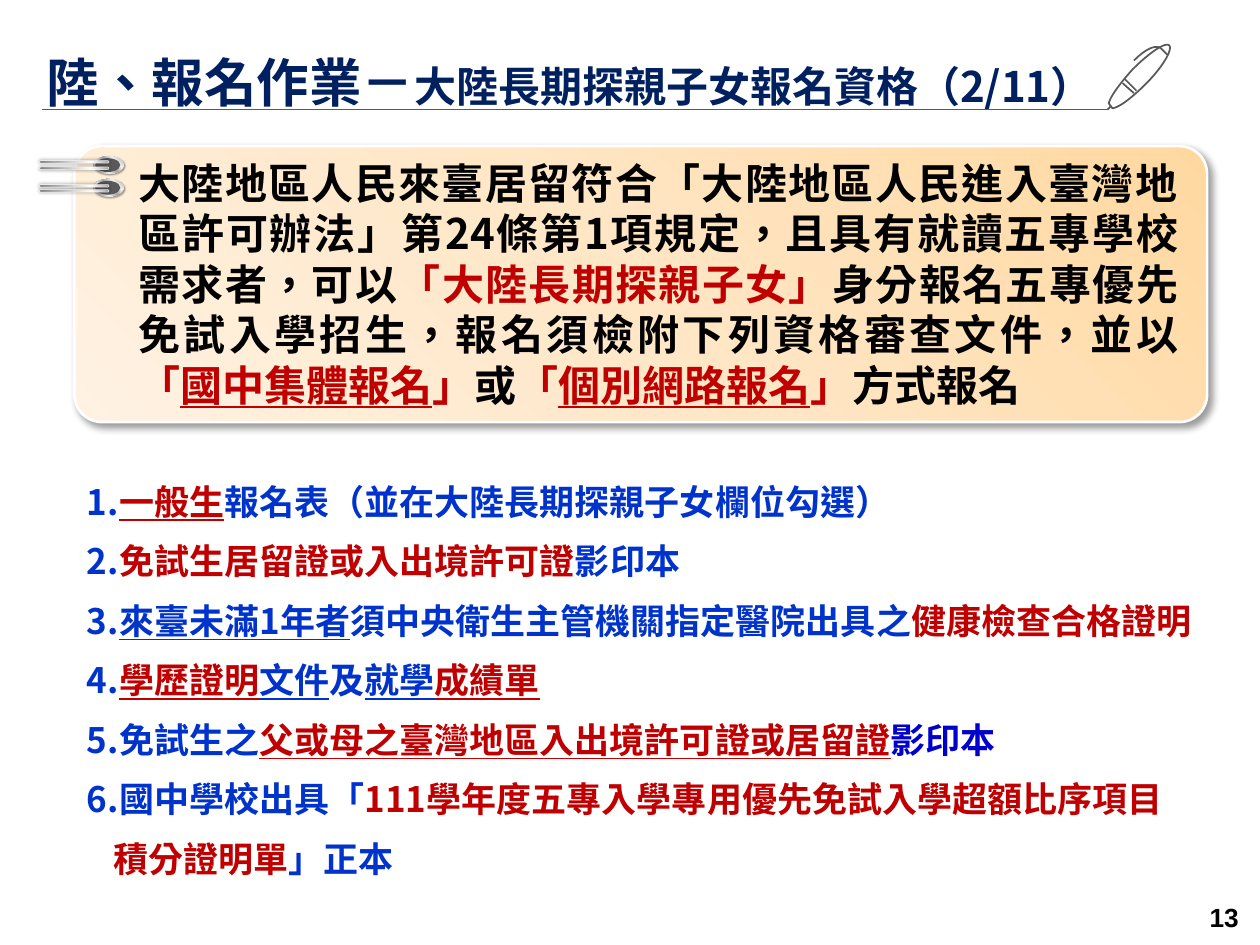
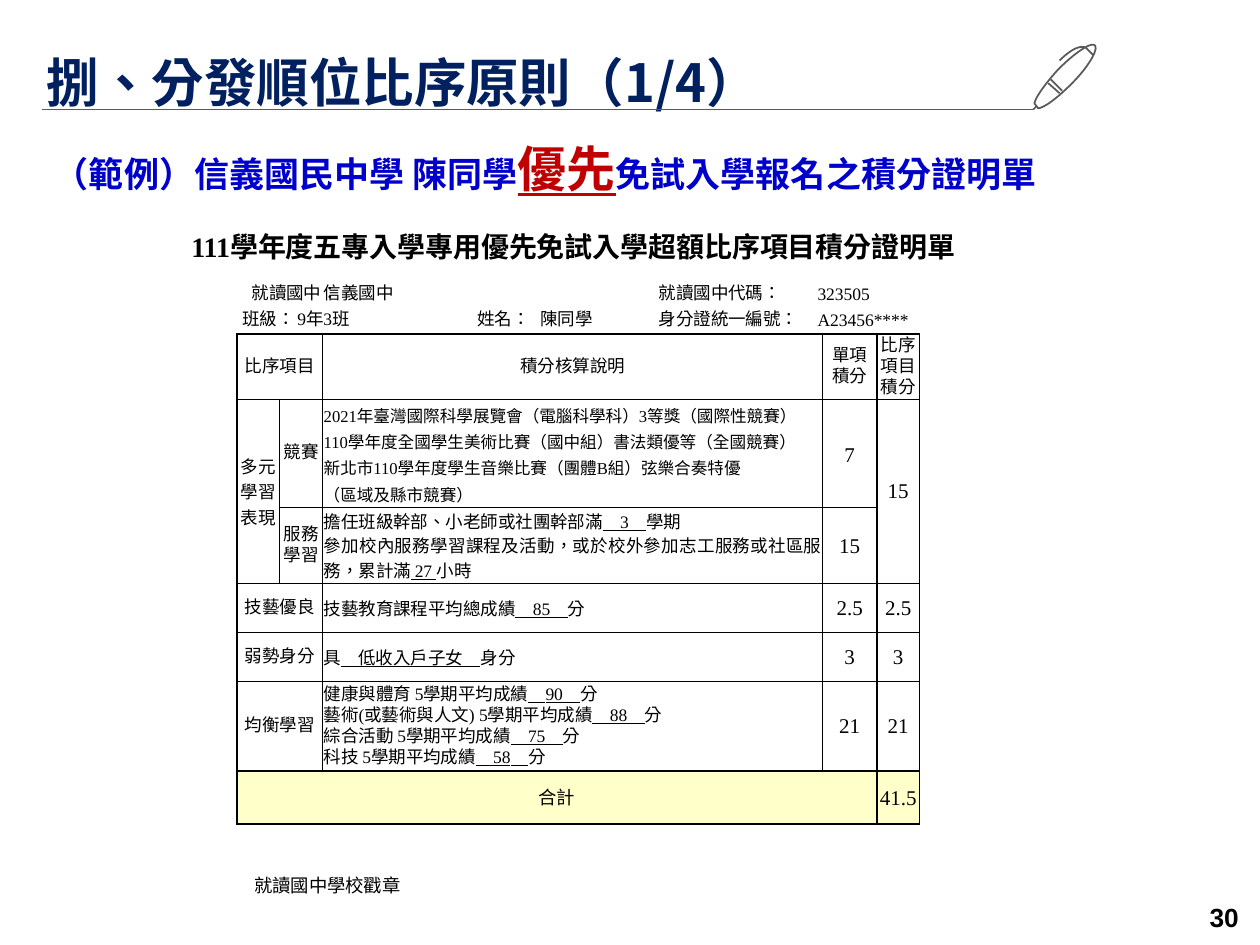
from dataclasses import dataclass
from typing import NamedTuple, Optional, Union

import pptx
import pptx.dml.color
import pptx.enum.shapes
import pptx.enum.text
import pptx.oxml
import pptx.oxml.ns
import pptx.util

Inches, Pt = pptx.util.Inches, pptx.util.Pt
ALIGN, ANCHOR = pptx.enum.text.PP_ALIGN, pptx.enum.text.MSO_ANCHOR
SHAPE = pptx.enum.shapes.MSO_SHAPE
qn = pptx.oxml.ns.qn

SANS, SERIF, ARIAL = "Noto Sans CJK SC", "Times New Roman", "Arial"
BLACK, WHITE, GREY, NAVY = "000000", "FFFFFF", "595959", "002060"
RED, BLUE, DEEP_BLUE, YELLOW = "C00000", "0033CC", "0000CC", "FFFFCA"

CALLOUT_STOPS = [(0, "FFD8A0"), (50, "FFE6C5"), (100, "FFF2E3")]
RING_STOPS = [(0, WHITE), (17, "A6A6A6"), (35, "F2F2F2"), (55, "A6A6A6"), (75, "F2F2F2"), (100, "A6A6A6")]
WIRE_STOPS = [(0, "808080"), (23, "A6A6A6"), (52, "D9D9D9"), (74, WHITE), (100, "A6A6A6")]
FOCUS_TOP_RIGHT = '<a:path path="circle"><a:fillToRect l="100000" b="100000"/></a:path>'

TITLE_LEFT, RULE_LEFT, RULE_Y, PEN_TOP = 0.27, 0.33, 0.87, 0.33
NO_STYLE_NO_GRID = "{2D5ABB26-0587-4C30-8999-92F81FD0307C}"


class Box(NamedTuple):
    left: float
    top: float
    width: float
    height: float

    def emu(self) -> list:
        return [Inches(v) for v in self]


class Span(NamedTuple):
    """A stretch of text; unset fields follow the paragraph."""
    text: str
    color: Optional[str] = None
    underline: bool = False
    size: Optional[float] = None


Text = Union[str, list]


@dataclass
class Cell:
    row: int
    col: int
    paragraphs: list
    rows: int = 1
    cols: int = 1
    align: object = ALIGN.CENTER
    size: float = 10
    line: object = Pt(12)
    indent: Optional[float] = None


def rgb(color: str):
    return pptx.dml.color.RGBColor.from_string(color)


def xml(markup: str):
    tag = markup[1:].split(" ")[0].split(">")[0].rstrip("/")
    return pptx.oxml.parse_xml(markup.replace(tag, f"{tag} {pptx.oxml.ns.nsdecls('a')}", 1))


def add_text(tf, text: Text, *, size: float, color: str = BLACK, latin: str = SANS, bold: bool = False,
             align=ALIGN.LEFT, line=None, before: float = 0, indent: Optional[float] = None) -> None:
    """Write one paragraph, filling the first one while it is empty."""
    p = tf.paragraphs[-1]
    if p.runs:
        p = tf.add_paragraph()
    p.alignment, p.space_before = align, Pt(before)
    if line is not None:
        p.line_spacing = line
    if indent is not None:
        pPr = p._p.get_or_add_pPr()
        pPr.set("marL", str(Inches(indent)))
        pPr.set("indent", "0")
        pPr.append(xml("<a:buNone/>"))
    for span in [Span(text)] if isinstance(text, str) else text:
        r = p.add_run()
        r.text = span.text
        r.font.size, r.font.bold = Pt(span.size or size), bold
        r.font.underline, r.font.name = span.underline, latin
        r.font.color.rgb = rgb(span.color or color)
        rPr = r._r.get_or_add_rPr()
        rPr.set("lang", "zh-TW")
        rPr.append(xml(f'<a:ea typeface="{SANS}"/>'))


def add_text_box(s, box: Box, text: Text, *, wrap: bool = True, anchor=ANCHOR.TOP, **fmt) -> None:
    tf = s.shapes.add_textbox(*box.emu()).text_frame
    tf.word_wrap, tf.vertical_anchor = wrap, anchor
    add_text(tf, text, **fmt)


def place(ph, box: Box):
    """Move a placeholder and return its text frame, top aligned and without fitting."""
    ph.left, ph.top, ph.width, ph.height = box.emu()
    tf = ph.text_frame
    tf.word_wrap, tf.vertical_anchor = True, ANCHOR.TOP
    tf.auto_size = pptx.enum.text.MSO_AUTO_SIZE.NONE
    return tf


def add_shape(s, kind, box: Box, *, fill: Union[str, list], direction: str = "", line: float = 0,
              rotation: float = 0, radius: Optional[float] = None, shadow: Optional[tuple] = None) -> None:
    """fill is a colour or gradient stops; shadow is blur, distance and angle."""
    sp = s.shapes.add_shape(kind, *box.emu())
    sp.rotation = rotation
    if radius is not None:
        sp.adjustments[0] = radius
    if line:
        sp.line.color.rgb, sp.line.width = rgb(WHITE), Pt(line)
    else:
        sp.line.fill.background()
    spPr = sp._element.spPr
    if isinstance(fill, str):
        sp.fill.solid()
        sp.fill.fore_color.rgb = rgb(fill)
    else:
        stops = "".join(f'<a:gs pos="{at * 1000}"><a:srgbClr val="{c}"/></a:gs>' for at, c in fill)
        spPr.find(qn("a:prstGeom")).addnext(xml(
            f'<a:gradFill rotWithShape="1"><a:gsLst>{stops}</a:gsLst>{direction}</a:gradFill>'))
    sp.shadow.inherit = False
    if shadow:
        blur, distance, angle = shadow
        spPr.find(qn("a:effectLst")).append(xml(
            f'<a:outerShdw blurRad="{Pt(blur)}" dist="{Pt(distance)}" dir="{angle * 60000}" algn="tl" '
            f'rotWithShape="0"><a:srgbClr val="{BLACK}"><a:alpha val="40000"/></a:srgbClr></a:outerShdw>'))


def linear(angle: int) -> str:
    return f'<a:lin ang="{angle * 60000}" scaled="0"/>'


def bezier(*points: tuple, steps: int = 12) -> list:
    """Points along a cubic curve, without its start."""
    curve = []
    for t in (i / steps for i in range(1, steps + 1)):
        weights = ((1 - t) ** 3, 3 * t * (1 - t) ** 2, 3 * t * t * (1 - t), t ** 3)
        curve.append(tuple(sum(w * pt[axis] for w, pt in zip(weights, points)) for axis in (0, 1)))
    return curve


def add_pen(s, left: float) -> None:
    body = [(49, 3), *bezier((49, 3), (46, 0), (33, 9), (20, 22)),
            *bezier((20, 22), (10, 33), (2, 44), (1, 49)), (4, 53),
            *bezier((4, 53), (10, 52), (20, 44), (31, 33)),
            *bezier((31, 33), (44, 20), (52, 6), (49, 3))]
    clip = [(48, 11), (42, 5), *bezier((42, 5), (42, 5), (36, 0), (21, 15))]
    strokes = [[(21, 41), (12, 33)], [(14, 30), (23, 39)], body, [(3, 51), (0, 54)], clip]
    strokes = [[(Inches(left + x / 100), Inches(PEN_TOP + y / 100)) for x, y in stroke] for stroke in strokes]
    pen = s.shapes.build_freeform(*strokes[0][0])
    for i, stroke in enumerate(strokes):
        if i:
            pen.move_to(*stroke[0])
        pen.add_line_segments(stroke[1:], close=False)
    sp = pen.convert_to_shape()
    sp.fill.background()
    sp.line.color.rgb, sp.line.width = rgb(GREY), Pt(1)
    sp.shadow.inherit = False


def add_slide(prs, layout: int, title: Text, number: str, pen_left: float):
    """A slide with title, ruled line ending in a pen, and page number."""
    s = prs.slides.add_slide(prs.slide_layouts[layout])
    tf = place(s.shapes.title, Box(TITLE_LEFT, 0.4, pen_left - TITLE_LEFT, 0.48))
    add_text(tf, title, size=30, color=NAVY, bold=True, line=0.9)
    rule = s.shapes.add_connector(pptx.enum.shapes.MSO_CONNECTOR.STRAIGHT, Inches(RULE_LEFT),
                                  Inches(RULE_Y), Inches(pen_left), Inches(RULE_Y))
    rule.line.color.rgb, rule.line.width = rgb(GREY), Pt(0.5)
    rule._element.spPr.append(xml("<a:effectLst/>"))
    add_pen(s, pen_left)
    add_text_box(s, Box(7.68, 7.13, 2.25, 0.3), number, size=15, latin=ARIAL, bold=True,
                 align=ALIGN.RIGHT, anchor=ANCHOR.MIDDLE)
    return s


def add_clipped_callout(s) -> None:
    add_shape(s, SHAPE.ROUNDED_RECTANGLE, Box(0.59, 1.16, 8.99, 2.19), fill=CALLOUT_STOPS,
              direction=FOCUS_TOP_RIGHT, line=1.5, radius=0.1, shadow=(4, 3, 45))
    for top in (1.37, 1.19):
        add_shape(s, SHAPE.OVAL, Box(0.79, top, 0.14, 0.24), fill=RING_STOPS, direction=linear(45),
                  rotation=270, shadow=(1, 1, 45))
        add_shape(s, SHAPE.OVAL, Box(0.8, top + 0.02, 0.11, 0.2), fill=GREY, rotation=270)
    for top in (1.24, 1.2, 1.06, 1.01):
        add_shape(s, SHAPE.ROUNDED_RECTANGLE, Box(0.58, top, 0.02, 0.55), fill=WIRE_STOPS,
                  direction=linear(90), line=0.25, rotation=270, radius=0.5, shadow=(2, 0, 0))
    add_text_box(s, Box(1, 1.2, 8.45, 2.12), [
        Span("大陸地區人民來臺居留符合「大陸地區人民進入臺灣地區許可辦法」第24條第1項規定，且具有就讀五專學校需求者，可以"),
        Span("「大陸長期探親子女」", RED),
        Span("身分報名五專優先免試入學招生，報名須檢附下列資格審查文件，並以"),
        Span("「", RED), Span("國中集體報名", RED, True), Span("」", RED), Span("或"),
        Span("「", RED), Span("個別網路報名", RED, True), Span("」", RED), Span("方式報名"),
    ], size=24, bold=True, align=ALIGN.JUSTIFY)


def build_qualification_slide(prs) -> None:
    title = [Span("陸、報名作業－"), Span("大陸長期探親子女報名資格（2/11）", size=24)]
    s = add_slide(prs, 1, title, "13", 8.79)
    documents = [
        [Span("1."), Span("一般生", RED, True), Span("報名表（並在大陸長期探親子女欄位勾選）")],
        [Span("2."), Span("免試生居留證或入出境許可證", RED), Span("影印本")],
        [Span("3."), Span("來臺未滿1年者", BLUE, True), Span("須中央衛生主管機關指定醫院出具之"),
         Span("健康檢查合格證明", RED)],
        [Span("4."), Span("學歷證明", RED, True), Span("文件", BLUE, True), Span("及"),
         Span("就學", BLUE, True), Span("成績單", RED, True)],
        [Span("5.免試生之"), Span("父或母之臺灣地區入出境許可證或居留證", RED, True), Span("影印本", DEEP_BLUE)],
        [Span("6.國中學校出具「"), Span("111學年度五專入學專用優先免試入學超額比序項目", RED)],
        [Span("積分證明單", RED), Span("」正本")],
    ]
    tf = place(s.placeholders[1], Box(0.59, 3.76, 9.06, 3.31))
    for document in documents:
        continued = document is documents[-1]
        add_text(tf, document, size=20, color=BLUE, bold=True, before=10, indent=0.21 if continued else 0)
    add_clipped_callout(s)


def filled(before: str, blank: str, after: str, pad: str = "　") -> list:
    """A sentence with an underlined, filled-in blank."""
    return [Span(before), Span(f"{pad}{blank}{pad}", underline=True), Span(after)]


def score(row: int, col: int, value: str, rows: int = 1, line=Pt(14)) -> Cell:
    return Cell(row, col, [value], rows=rows, size=12, line=line)


def detail(row: int, paragraphs: list, line: float = 14, align=ALIGN.JUSTIFY, size: float = 10) -> Cell:
    return Cell(row, 3, paragraphs, cols=5, size=size, line=Pt(line), align=align)


def certificate_cells() -> list:
    subjects = [("健康與體育 5學期平均成績", "90"), ("藝術(或藝術與人文) 5學期平均成績", "88"),
                ("綜合活動 5學期平均成績", "75"), ("科技 5學期平均成績", "58")]
    left, right = ALIGN.LEFT, ALIGN.RIGHT
    return [
        Cell(0, 0, ["就讀國中："], cols=3, align=right), Cell(0, 3, ["信義國中"], cols=3, align=left),
        Cell(0, 6, ["就讀國中代碼："], align=left), Cell(0, 7, ["323505"], cols=3, align=left),
        Cell(1, 0, ["班級："], cols=2, align=right), Cell(1, 2, ["9年3班"], cols=2, align=left),
        Cell(1, 4, ["姓名："], align=left, indent=0.09), Cell(1, 5, ["陳同學"], align=left),
        Cell(1, 6, ["身分證統一編號："], align=left), Cell(1, 7, ["A23456****"], cols=3, align=left),
        Cell(2, 0, ["比序項目"], cols=3), Cell(2, 3, ["積分核算說明"], cols=5),
        Cell(2, 8, ["單項", "積分"]), Cell(2, 9, ["比序項目積分"]),
        Cell(3, 0, ["多元學習表現"], rows=2, line=None), Cell(3, 1, ["競賽"], cols=2),
        detail(3, ["2021年臺灣國際科學展覽會（電腦科學科）3等獎（國際性競賽）",
                   "110學年度全國學生美術比賽（國中組）書法類優等（全國競賽）",
                   "新北市110學年度學生音樂比賽（團體B組）弦樂合奏特優", "（區域及縣市競賽）"], 15, size=9.5),
        score(3, 8, "7", line=Pt(15)), score(3, 9, "15", rows=2),
        Cell(4, 1, ["服務", "學習"], cols=2),
        detail(4, [filled("擔任班級幹部、小老師或社團幹部滿", "3", "學期"),
                   filled("參加校內服務學習課程及活動，或於校外參加志工服務或社區服務，累計滿", "27", "小時", " ")]),
        score(4, 8, "15"),
        Cell(5, 0, ["技藝優良"], cols=3), detail(5, [filled("技藝教育課程平均總成績", "85", "分")]),
        score(5, 8, "2.5"), score(5, 9, "2.5"),
        Cell(6, 0, ["弱勢身分"], cols=3), detail(6, [filled("具", "低收入戶子女", "身分")]),
        score(6, 8, "3"), score(6, 9, "3"),
        Cell(7, 0, ["均衡學習"], cols=3),
        detail(7, [filled(name, mark, "分") for name, mark in subjects], 12, left),
        score(7, 8, "21"), score(7, 9, "21"),
        Cell(8, 0, ["合計"], cols=9, size=10.5, line=Pt(14)), score(8, 9, "41.5"),
    ]


def add_certificate(s) -> None:
    widths = [0.34, 0.13, 0.21, 1.13, 0.59, 0.94, 1.26, 0.05, 0.43, 0.34]
    heights = [0.19, 0.22, 0.52, 0.86, 0.6, 0.39, 0.39, 0.71, 0.42]
    box = Box(1.88, 2.24, sum(widths), sum(heights))
    table = s.shapes.add_table(len(heights), len(widths), *box.emu()).table
    table._tbl.tblPr.find(qn("a:tableStyleId")).text = NO_STYLE_NO_GRID
    table.first_row = table.horz_banding = False
    for column, width in zip(table.columns, widths):
        column.width = Inches(width)
    for i, (row, height) in enumerate(zip(table.rows, heights)):
        row.height = Inches(height)
        sides = "" if i == 0 else "B" if i == 1 else "LRTB"
        for tc in row.cells:
            for side in sides:
                tc._tc.get_or_add_tcPr().append(xml(
                    f'<a:ln{side} w="{Pt(1)}"><a:solidFill><a:srgbClr val="{BLACK}"/></a:solidFill></a:ln{side}>'))
            if i == len(heights) - 1:
                tc.fill.solid()
                tc.fill.fore_color.rgb = rgb(YELLOW)
            else:
                tc.fill.background()
            tc.margin_left = tc.margin_right = Inches(0.01)
            tc.margin_top = tc.margin_bottom = 0
            tc.vertical_anchor = ANCHOR.MIDDLE
    for cell in certificate_cells():
        tc = table.cell(cell.row, cell.col)
        if cell.rows * cell.cols > 1:
            tc.merge(table.cell(cell.row + cell.rows - 1, cell.col + cell.cols - 1))
        for text in cell.paragraphs:
            add_text(tc.text_frame, text, size=cell.size, latin=SERIF, align=cell.align,
                     line=cell.line, indent=cell.indent)


def build_ranking_slide(prs) -> None:
    s = add_slide(prs, 5, "捌、分發順位比序原則（1/4）", "30", 8.2)
    add_text_box(s, Box(0.33, 1.05, 8.15, 0.57), [
        Span("（範例）信義國民中學 陳同學"), Span("優先", RED, True, 28), Span("免試入學報名之積分證明單"),
    ], size=20, color=DEEP_BLUE, bold=True)
    add_certificate(s)
    add_text_box(s, Box(1.42, 1.77, 6.35, 0.37), "111學年度五專入學專用優先免試入學超額比序項目積分證明單",
                 size=16, latin=SERIF, bold=True, wrap=False)
    add_text_box(s, Box(1.92, 6.89, 1.38, 0.28), "就讀國中學校戳章", size=10.5, wrap=False)


def main() -> None:
    prs = pptx.Presentation()
    prs.slide_width, prs.slide_height = Inches(10), Inches(7.5)
    build_qualification_slide(prs)
    build_ranking_slide(prs)
    prs.save("out.pptx")


if __name__ == "__main__":
    main()
